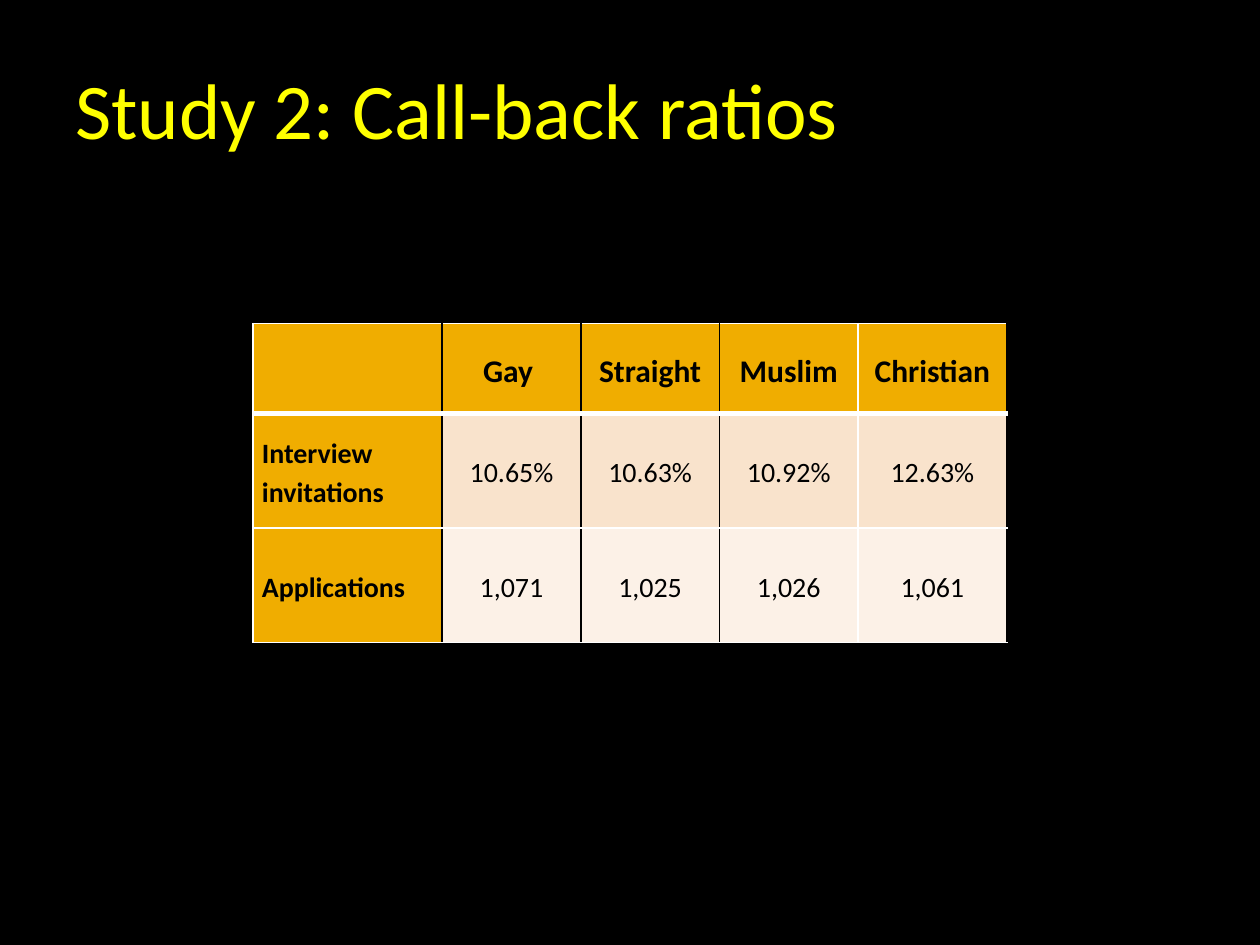
from dataclasses import dataclass

from lxml import etree
from pptx import Presentation
from pptx.dml.color import RGBColor
from pptx.enum import text
from pptx.oxml import ns
from pptx.util import Pt


@dataclass(frozen=True)
class Theme:
    font: str = "Calibri"
    background: str = "000000"
    title: str = "FFFF00"
    ink: str = "000000"
    rule: str = "FFFFFF"
    header_fill: str = "F0AD00"
    band_fills: tuple = ("F9E3CC", "FCF1E7")
    title_size: int = 45
    header_size: int = 18
    body_size: int = 16


THEME = Theme()

ROWS = [
    ["", "Gay ", "Straight", "Muslim", "Christian"],
    ["Interview invitations", "10.65%", "10.63%", "10.92%", "12.63%"],
    ["Applications", "1,071", "1,025", "1,026", "1,061"],
]
COLUMN_WIDTHS = [108, 79.2, 79.2, 79.2, 85]
ROW_HEIGHTS = [51.2, 65.5, 65.5]
# Colours of the vertical rules, from the left edge to the right edge
VERTICAL_RULES = [THEME.rule, THEME.ink, THEME.ink, THEME.ink, THEME.rule, THEME.ink]
# Widths of the horizontal rules, from the top edge to the bottom edge
HORIZONTAL_RULES = [1, 3, 1, 1]


def format_runs(paragraph, size, color, bold=False):
    for run in paragraph.runs:
        run.font.name = THEME.font
        run.font.size = Pt(size)
        run.font.bold = bold
        run.font.color.rgb = RGBColor.from_string(color)


def set_borders(cell, row, column):
    borders = {
        "a:lnL": (VERTICAL_RULES[column], 1),
        "a:lnR": (VERTICAL_RULES[column + 1], 1),
        "a:lnT": (THEME.rule, HORIZONTAL_RULES[row]),
        "a:lnB": (THEME.rule, HORIZONTAL_RULES[row + 1]),
    }
    properties = cell._tc.get_or_add_tcPr()
    # Border lines must come before the fill
    for position, (tag, (color, width)) in enumerate(borders.items()):
        line = etree.Element(ns.qn(tag), w=str(Pt(width)))
        fill = etree.SubElement(line, ns.qn("a:solidFill"))
        etree.SubElement(fill, ns.qn("a:srgbClr"), val=color)
        properties.insert(position, line)


def add_title(slide, left, top, width, height):
    box = slide.shapes.add_textbox(Pt(left), Pt(top), Pt(width), Pt(height))
    frame = box.text_frame
    frame.word_wrap = True
    frame.vertical_anchor = text.MSO_ANCHOR.MIDDLE
    frame.margin_left = Pt(7.2)
    frame.margin_right = frame.margin_top = frame.margin_bottom = Pt(3.6)
    frame.text = "Study 2: Call-back ratios"
    format_runs(frame.paragraphs[0], THEME.title_size, THEME.title)


def fill_cell(cell, row, column, value):
    is_header = row == 0 or column == 0
    color = THEME.header_fill if is_header else THEME.band_fills[row - 1]
    cell.fill.solid()
    cell.fill.fore_color.rgb = RGBColor.from_string(color)
    set_borders(cell, row, column)
    cell.vertical_anchor = text.MSO_ANCHOR.MIDDLE
    cell.margin_left = cell.margin_right = Pt(5)
    cell.margin_top = cell.margin_bottom = 0
    if value:
        cell.text_frame.text = value
        paragraph = cell.text_frame.paragraphs[0]
        paragraph.line_spacing = 1.15
        paragraph.alignment = text.PP_ALIGN.CENTER if column else text.PP_ALIGN.LEFT
        size = THEME.body_size if row else THEME.header_size
        format_runs(paragraph, size, THEME.ink, is_header)


def add_ratio_table(slide, left, top):
    frame = slide.shapes.add_table(
        len(ROWS), len(COLUMN_WIDTHS), Pt(left), Pt(top),
        Pt(sum(COLUMN_WIDTHS)), Pt(sum(ROW_HEIGHTS)))
    table = frame.table
    for column, width in zip(table.columns, COLUMN_WIDTHS):
        column.width = Pt(width)
    for row, height in zip(table.rows, ROW_HEIGHTS):
        row.height = Pt(height)
    for row, values in enumerate(ROWS):
        for column, value in enumerate(values):
            fill_cell(table.cell(row, column), row, column, value)


def main():
    presentation = Presentation()
    presentation.slide_width, presentation.slide_height = Pt(720), Pt(540)
    slide = presentation.slides.add_slide(presentation.slide_layouts[6])
    slide.background.fill.solid()
    slide.background.fill.fore_color.rgb = RGBColor.from_string(THEME.background)

    add_title(slide, 36, 12.2, 648, 98.6)
    add_ratio_table(slide, 144.7, 185)

    presentation.save("out.pptx")


if __name__ == "__main__":
    main()
